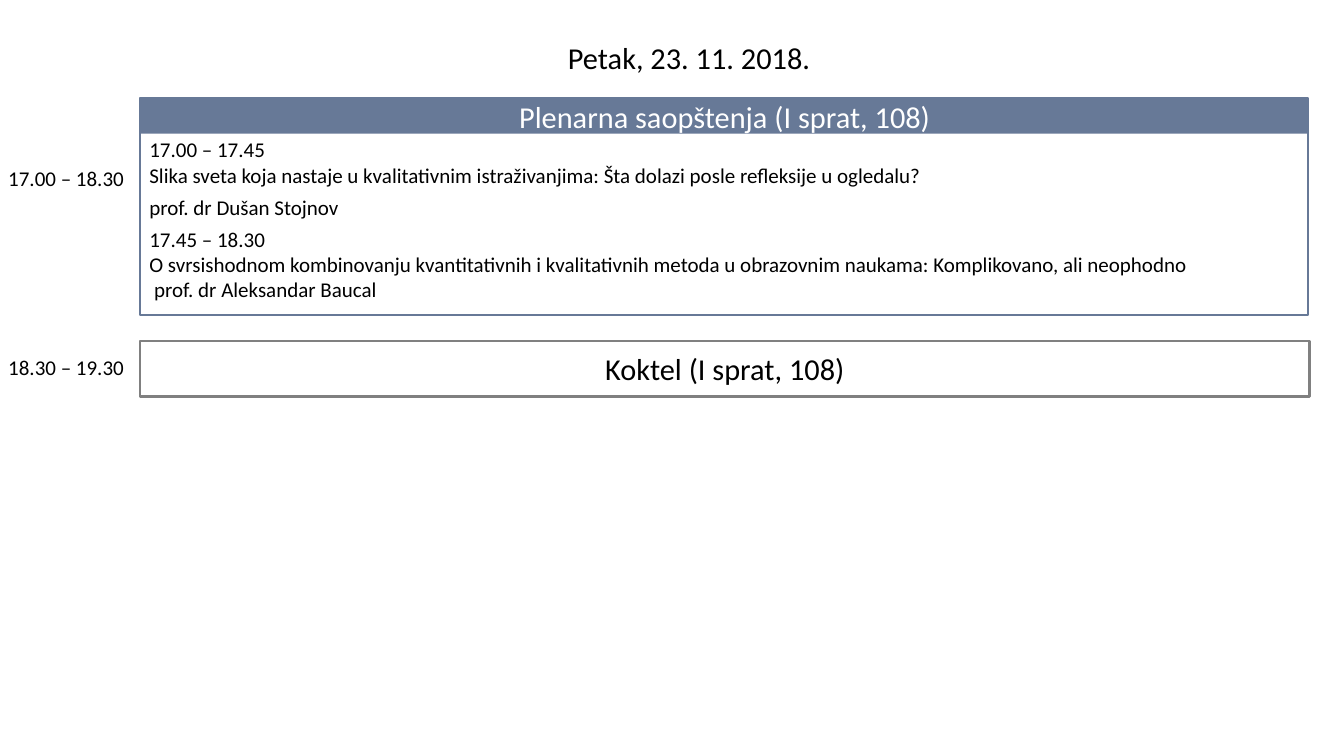
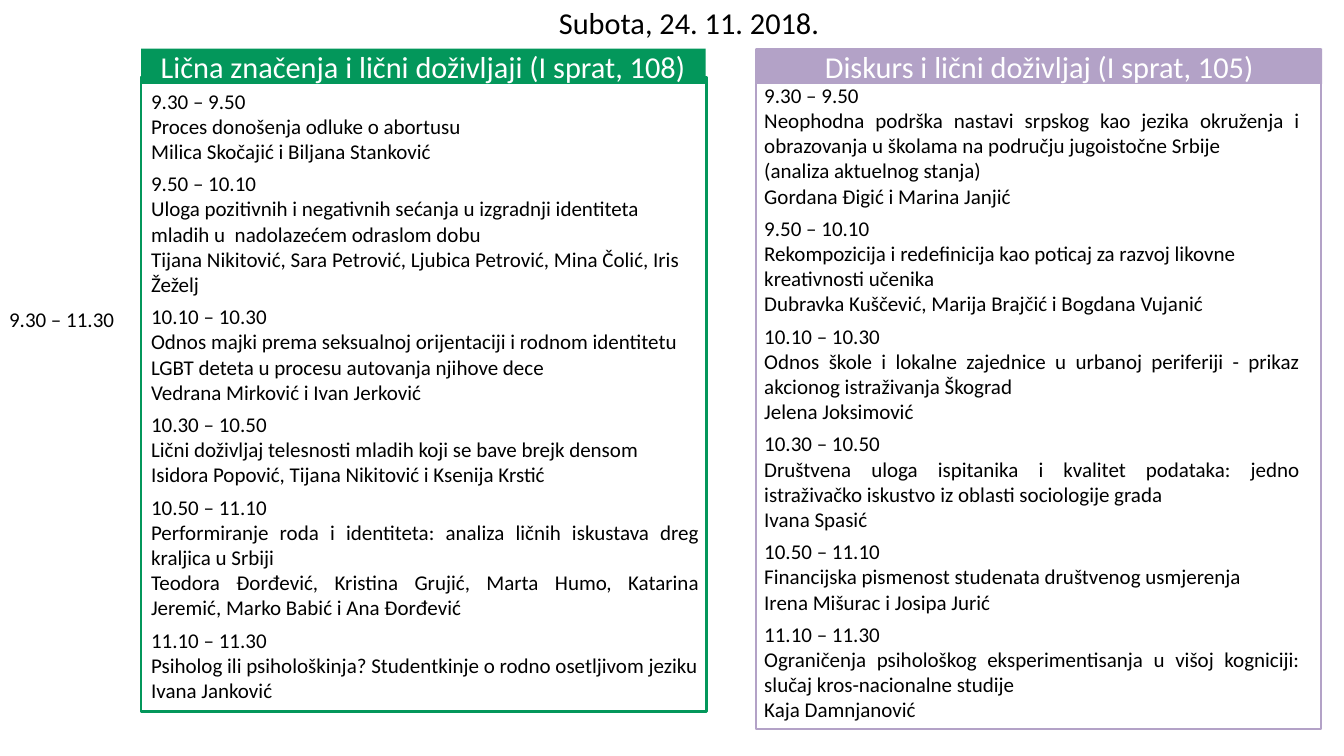
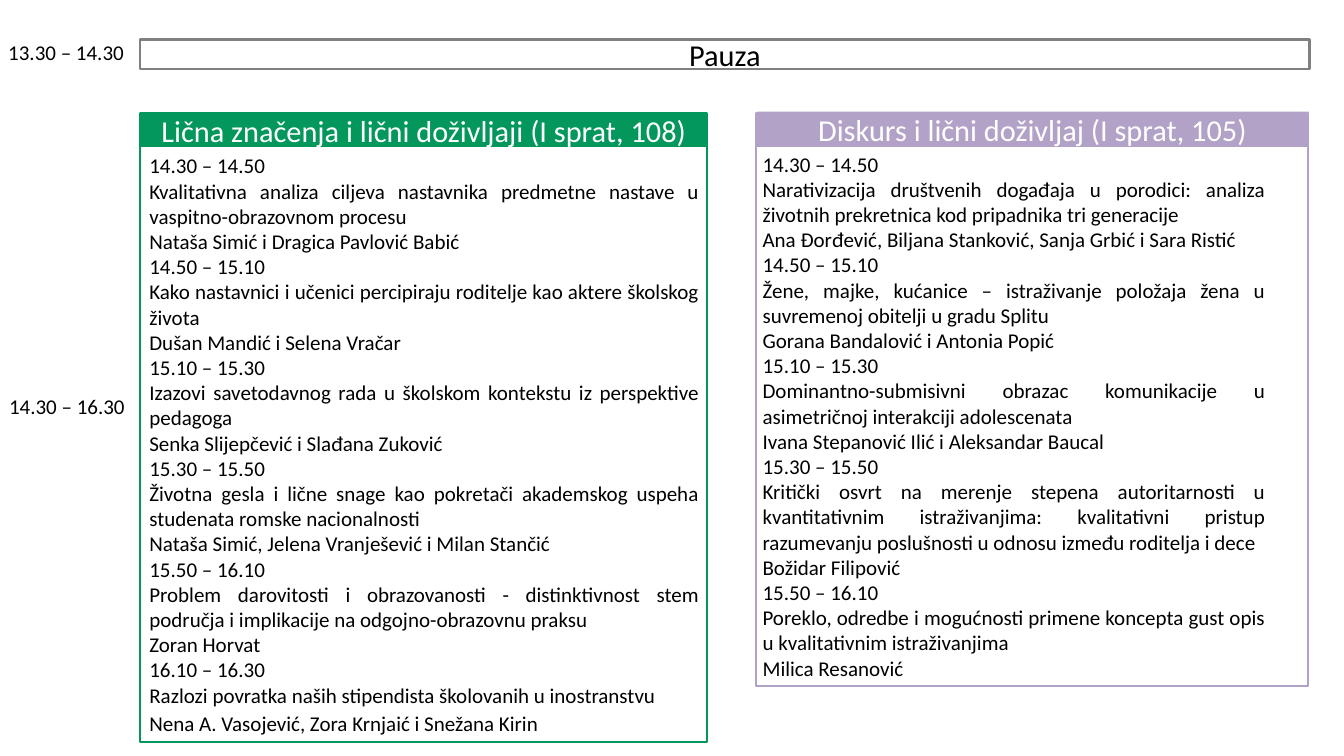
import pptx
import pptx.util
import pptx.dml.color
import pptx.enum.shapes
import pptx.enum.text

PX = 9144
FONT = "Calibri"
BLUE, GREEN, LILAC = "677997", "03975B", "B3A2C7"
GRAY, BLACK, WHITE = "808080", "000000", "FFFFFF"
BIG, SMALL = 26, 18
ALIGN = pptx.enum.text.PP_ALIGN
SIDES = {"l": ALIGN.LEFT, "j": ALIGN.JUSTIFY, "c": ALIGN.CENTER}

SELF = "Lična značenja i lični doživljaji (I sprat, 108)"
TALK = "Diskurs i lični doživljaj (I sprat, 105)"

PLENARY = [
    ("l", "17.00 – 17.45",
     "Slika sveta koja nastaje u kvalitativnim istraživanjima: Šta dolazi posle refleksije u ogledalu?"),
    ("l", "prof. dr Dušan Stojnov"),
    ("l", "17.45 – 18.30",
     "O svrsishodnom kombinovanju kvantitativnih i kvalitativnih metoda u obrazovnim naukama: Komplikovano, ali neophodno",
     " prof. dr Aleksandar Baucal"),
]
SELF_AM = [
    ("j", "9.30 – 9.50", "Proces donošenja odluke o abortusu",
     "Milica Skočajić i Biljana Stanković"),
    ("l", "9.50 – 10.10",
     "Uloga pozitivnih i negativnih sećanja u izgradnji identiteta mladih u  nadolazećem odraslom dobu",
     "Tijana Nikitović, Sara Petrović, Ljubica Petrović, Mina Čolić, Iris Žeželj"),
    ("l", "10.10 – 10.30",
     "Odnos majki prema seksualnoj orijentaciji i rodnom identitetu LGBT deteta u procesu autovanja njihove dece",
     "Vedrana Mirković i Ivan Jerković"),
    ("l", "10.30 – 10.50", "Lični doživljaj telesnosti mladih koji se bave brejk densom",
     "Isidora Popović, Tijana Nikitović i Ksenija Krstić"),
    ("j", "10.50 – 11.10",
     "Performiranje roda i identiteta: analiza ličnih iskustava dreg kraljica u Srbiji",
     "Teodora Đorđević, Kristina Grujić, Marta Humo, Katarina Jeremić, Marko Babić i Ana Đorđević"),
    ("j", "11.10 – 11.30",
     "Psiholog ili psihološkinja? Studentkinje o rodno osetljivom jeziku",
     "Ivana Janković"),
]
TALK_AM = [
    ("j", "9.30 – 9.50",
     "Neophodna podrška nastavi srpskog kao jezika okruženja i obrazovanja u školama na području jugoistočne Srbije",
     "(analiza aktuelnog stanja)", "Gordana Đigić i Marina Janjić"),
    ("l", "9.50 – 10.10",
     "Rekompozicija i redefinicija kao poticaj za razvoj likovne kreativnosti učenika",
     "Dubravka Kuščević, Marija Brajčić i Bogdana Vujanić"),
    ("j", "10.10 – 10.30",
     "Odnos škole i lokalne zajednice u urbanoj periferiji - prikaz akcionog istraživanja Škograd",
     "Jelena Joksimović"),
    ("j", "10.30 – 10.50",
     "Društvena uloga ispitanika i kvalitet podataka: jedno istraživačko iskustvo iz oblasti sociologije grada",
     "Ivana Spasić"),
    ("l", "10.50 – 11.10", "Financijska pismenost studenata društvenog usmjerenja",
     "Irena Mišurac i Josipa Jurić"),
    ("j", "11.10 – 11.30",
     "Ograničenja psihološkog eksperimentisanja u višoj kogniciji: slučaj kros-nacionalne studije",
     "Kaja Damnjanović"),
]
SELF_PM = [
    ("j", "14.30 – 14.50",
     "Kvalitativna analiza ciljeva nastavnika predmetne nastave u vaspitno-obrazovnom procesu",
     "Nataša Simić i Dragica Pavlović Babić"),
    ("j", "14.50 – 15.10",
     "Kako nastavnici i učenici percipiraju roditelje kao aktere školskog života",
     "Dušan Mandić i Selena Vračar"),
    ("j", "15.10 – 15.30",
     "Izazovi savetodavnog rada u školskom kontekstu iz perspektive pedagoga",
     "Senka Slijepčević i Slađana Zuković"),
    ("j", "15.30 – 15.50",
     "Životna gesla i lične snage kao pokretači akademskog uspeha studenata romske nacionalnosti",
     "Nataša Simić, Jelena Vranješević i Milan Stančić"),
    ("j", "15.50 – 16.10",
     "Problem darovitosti i obrazovanosti - distinktivnost stem područja i implikacije na odgojno-obrazovnu praksu",
     "Zoran Horvat"),
    ("j", "16.10 – 16.30",
     "Razlozi povratka naših stipendista školovanih u inostranstvu",
     "Nena A. Vasojević, Zora Krnjaić i Snežana Kirin"),
]
TALK_PM = [
    ("j", "14.30 – 14.50",
     "Narativizacija društvenih događaja u porodici: analiza životnih prekretnica kod pripadnika tri generacije",
     "Ana Đorđević, Biljana Stanković, Sanja Grbić i Sara Ristić"),
    ("j", "14.50 – 15.10",
     "Žene, majke, kućanice – istraživanje položaja žena u suvremenoj obitelji u gradu Splitu",
     "Gorana Bandalović i Antonia Popić"),
    ("j", "15.10 – 15.30",
     "Dominantno-submisivni obrazac komunikacije u asimetričnoj interakciji adolescenata",
     "Ivana Stepanović Ilić i Aleksandar Baucal"),
    ("j", "15.30 – 15.50",
     "Kritički osvrt na merenje stepena autoritarnosti u kvantitativnim istraživanjima: kvalitativni pristup razumevanju poslušnosti u odnosu između roditelja i dece",
     "Božidar Filipović"),
    ("j", "15.50 – 16.10",
     "Poreklo, odredbe i mogućnosti primene koncepta gust opis u kvalitativnim istraživanjima",
     "Milica Resanović"),
]

DAYS = [
    {"title": ("Petak, 23. 11. 2018.", 42),
     "times": [("17.00 – 18.30", 0, 192), ("18.30 – 19.30", 0, 417)],
     "breaks": [("Koktel (I sprat, 108)", 406, 66)],
     "panels": [
         {"head": "Plenarna saopštenja (I sprat, 108)", "hue": BLUE, "talks": PLENARY, "gap": 6,
          "frame": (167, 117, 1390, 258), "band": (168, 117, 1390, 42),
          "body": (168, 158, 1307, 239)}]},
    {"title": ("Subota, 24. 11. 2018.", 0),
     "times": [("9.30 – 11.30", 1, 360)],
     "breaks": [],
     "panels": [
         {"head": SELF, "hue": GREEN, "talks": SELF_AM, "gap": 6,
          "frame": (168, 92, 673, 755), "band": (168, 58, 672, 42),
          "body": (170, 100, 672, 749)},
         {"head": TALK, "hue": LILAC, "talks": TALK_AM, "gap": 6,
          "frame": (900, 59, 673, 809), "band": (901, 58, 673, 42),
          "body": (900, 93, 657, 788)}]},
    {"title": None,
     "times": [("13.30 – 14.30", 0, 42), ("14.30 – 16.30", 1, 464)],
     "breaks": [("Pauza", 47, 35)],
     "panels": [
         {"head": SELF, "hue": GREEN, "talks": SELF_PM, "gap": 0, "last": 1.15,
          "frame": (167, 135, 675, 748), "band": (168, 135, 674, 40),
          "body": (168, 177, 674, 709)},
         {"head": TALK, "hue": LILAC, "talks": TALK_PM, "gap": 0,
          "frame": (900, 135, 657, 682), "band": (901, 133, 657, 42),
          "body": (898, 175, 618, 656)}]},
]


def color(code):
    return pptx.dml.color.RGBColor.from_string(code)


def scale(box):
    return [n * PX for n in box]


def style(para, size, hue, side):
    para.font.name = FONT
    para.font.size = pptx.util.Pt(size)
    para.font.color.rgb = color(hue)
    para.alignment = SIDES[side]


def add_rect(slide, box, fill=None, line=None, text=None, ink=BLACK):
    rect = slide.shapes.add_shape(pptx.enum.shapes.MSO_SHAPE.RECTANGLE, *scale(box))
    rect.shadow.inherit = False
    if fill:
        rect.fill.solid()
        rect.fill.fore_color.rgb = color(fill)
    else:
        rect.fill.background()
    if line:
        rect.line.color.rgb = color(line)
        rect.line.width = pptx.util.Pt(2)
    else:
        rect.line.fill.background()
    if text:
        frame = rect.text_frame
        frame.vertical_anchor = pptx.enum.text.MSO_ANCHOR.MIDDLE
        frame.text = text
        style(frame.paragraphs[0], BIG, ink, "c")


def add_text(slide, box, talks, gap=0, last=None):
    frame = slide.shapes.add_textbox(*scale(box)).text_frame
    frame.word_wrap = True
    para = None
    for side, *lines in talks:
        for line in lines:
            para = frame.add_paragraph() if para else frame.paragraphs[0]
            para.text = line
            style(para, SMALL, BLACK, side)
        if gap:
            para.space_after = pptx.util.Pt(gap)
    if last:
        para.line_spacing = last


def set_title(slide, text, top):
    title = slide.shapes.title
    title.left, title.top, title.width, title.height = scale((358, top, 925, 54))
    frame = title.text_frame
    frame.text = text
    frame.word_wrap = True
    frame.auto_size = pptx.enum.text.MSO_AUTO_SIZE.NONE
    frame.vertical_anchor = pptx.enum.text.MSO_ANCHOR.TOP
    style(frame.paragraphs[0], BIG, BLACK, "c")


def add_panel(slide, panel):
    add_rect(slide, panel["frame"], line=panel["hue"])
    add_rect(slide, panel["band"], fill=panel["hue"], text=panel["head"], ink=WHITE)
    add_text(slide, panel["body"], panel["talks"], panel["gap"], panel.get("last"))


def main():
    deck = pptx.Presentation()
    deck.slide_width, deck.slide_height = scale((1600, 900))
    for day in DAYS:
        slide = deck.slides.add_slide(deck.slide_layouts[5 if day["title"] else 6])
        if day["title"]:
            set_title(slide, *day["title"])
        for panel in day["panels"]:
            add_panel(slide, panel)
        for text, left, top in day["times"]:
            add_text(slide, (left, top, 167, 40), [("l", text)])
        for text, top, high in day["breaks"]:
            add_rect(slide, (167, top, 1392, high), line=GRAY, text=text)
    deck.save("out.pptx")


if __name__ == "__main__":
    main()
